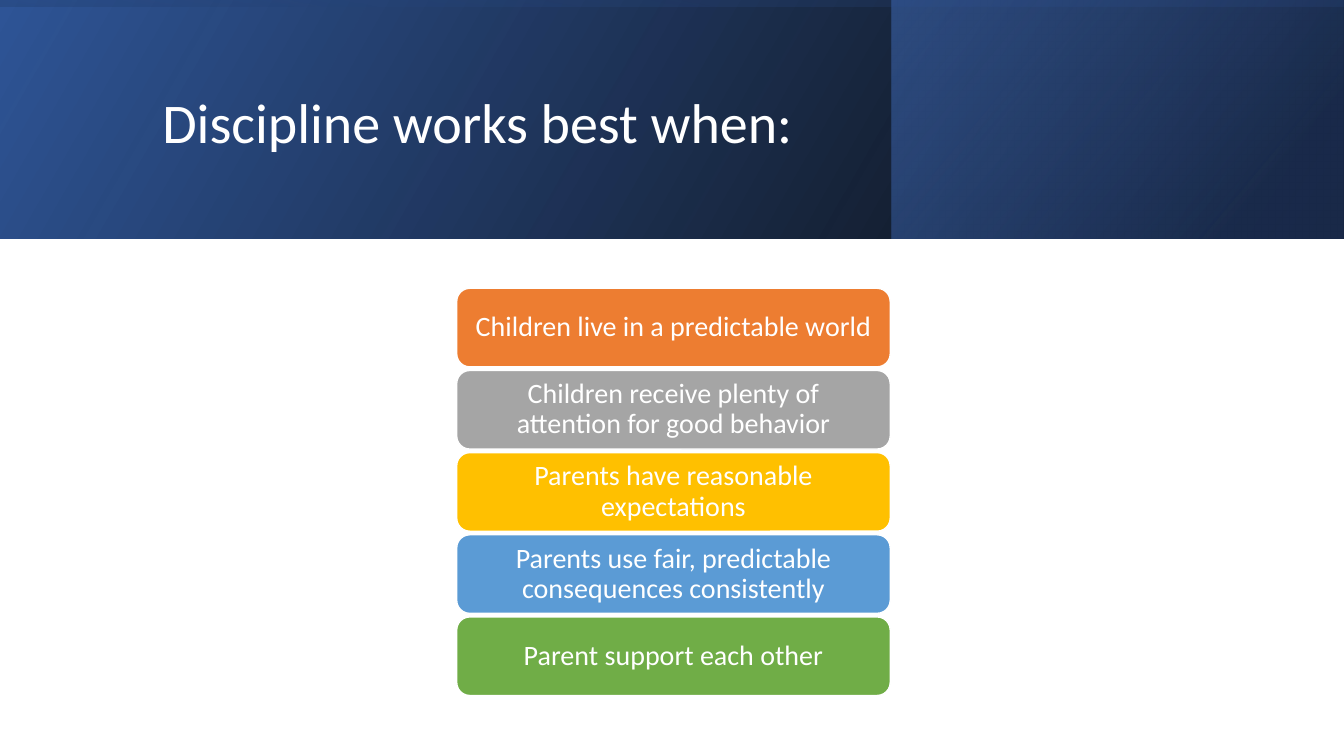
"""Build the slide on when discipline works best."""
import lxml.etree
import pptx
import pptx.dml.color
import pptx.enum.shapes
import pptx.enum.text
import pptx.oxml.ns
import pptx.util

Inches = pptx.util.Inches
SHAPE = pptx.enum.shapes.MSO_SHAPE
ALIGN = pptx.enum.text.PP_ALIGN
WHITE = "FFFFFF"

BANDS = [
    ((0, 0, 13.33, 2.37), 0, 30, [(0, "000000", 96), (1, "2F5597", 100)]),
    ((8.84, 0, 4.48, 2.37), 0, 40, [(0.19, "203864", 68), (1, "4472C4", 48)]),
    ((5.48, -5.48, 2.37, 13.33), 270, 10, [(0.23, "2F5597", 16), (0.99, "000000", 45)]),
]
CONDITIONS = [
    ("Children live in a predictable world", "ED7D31"),
    ("Children receive plenty of attention for good behavior", "A5A5A5"),
    ("Parents have reasonable expectations", "FFC000"),
    ("Parents use fair, predictable consequences consistently", "5B9BD5"),
    ("Parent support each other", "70AD47"),
]


def rgb(value):
    return pptx.dml.color.RGBColor.from_string(value)


def set_all(obj, values):
    for name, value in values.items():
        setattr(obj, name, value)


def add_shape(s, kind, box):
    sp = s.shapes.add_shape(kind, *map(Inches, box))
    sp.shadow.inherit = False
    return sp


def add_band(s, box, rotation, angle, stops):
    sp = add_shape(s, SHAPE.RECTANGLE, box)
    sp.rotation = rotation
    sp.line.fill.background()
    sp.fill.gradient()
    sp.fill.gradient_angle = angle
    for stop, (position, color, _) in zip(sp.fill.gradient_stops, stops):
        stop.position = position
        stop.color.rgb = rgb(color)
    qn = pptx.oxml.ns.qn
    for clr, (_, _, opacity) in zip(sp._element.iter(qn("a:srgbClr")), stops):
        lxml.etree.SubElement(clr, qn("a:alpha"), val=str(opacity * 1000))
    sp._element.spPr.find(qn("a:xfrm")).set("flipH", "1")


def write_text(sp, text, size, align, margins):
    tf = sp.text_frame
    set_all(tf, {
        "word_wrap": True,
        "auto_size": pptx.enum.text.MSO_AUTO_SIZE.NONE,
        "vertical_anchor": pptx.enum.text.MSO_ANCHOR.MIDDLE,
    })
    for side, margin in zip(("left", "top", "right", "bottom"), margins):
        setattr(tf, f"margin_{side}", Inches(margin))
    p = tf.paragraphs[0]
    set_all(p, {"alignment": align, "line_spacing": 0.9})
    r = p.add_run()
    r.text = text
    set_all(r.font, {"name": "Calibri", "size": pptx.util.Pt(size)})
    r.font.color.rgb = rgb(WHITE)


def add_title(s, text):
    sp = s.shapes.title
    s.shapes._spTree.append(sp._element)
    set_all(sp, {"left": Inches(1.51), "top": Inches(0.38),
                 "width": Inches(10.63), "height": Inches(1.72)})
    write_text(sp, text, 40, ALIGN.LEFT, (0.1, 0.05, 0.1, 0.05))


def add_condition(s, top, text, color):
    sp = add_shape(s, SHAPE.ROUNDED_RECTANGLE, (4.53, top, 4.3, 0.78))
    sp.fill.solid()
    sp.fill.fore_color.rgb = rgb(color)
    sp.line.color.rgb = rgb(WHITE)
    sp.line.width = pptx.util.Pt(1)
    write_text(sp, text, 20, ALIGN.CENTER, (0.12, 0.08, 0.12, 0.08))


def main():
    prs = pptx.Presentation()
    set_all(prs, {"slide_width": Inches(13.33), "slide_height": Inches(7.5)})
    s = prs.slides.add_slide(prs.slide_layouts[5])
    for band in BANDS:
        add_band(s, *band)
    add_title(s, "Discipline works best when:")
    pitch = (6.12 - 2.86) / (len(CONDITIONS) - 1)
    for i, (text, color) in enumerate(CONDITIONS):
        add_condition(s, 2.86 + i * pitch, text, color)
    prs.save("out.pptx")


if __name__ == "__main__":
    main()
